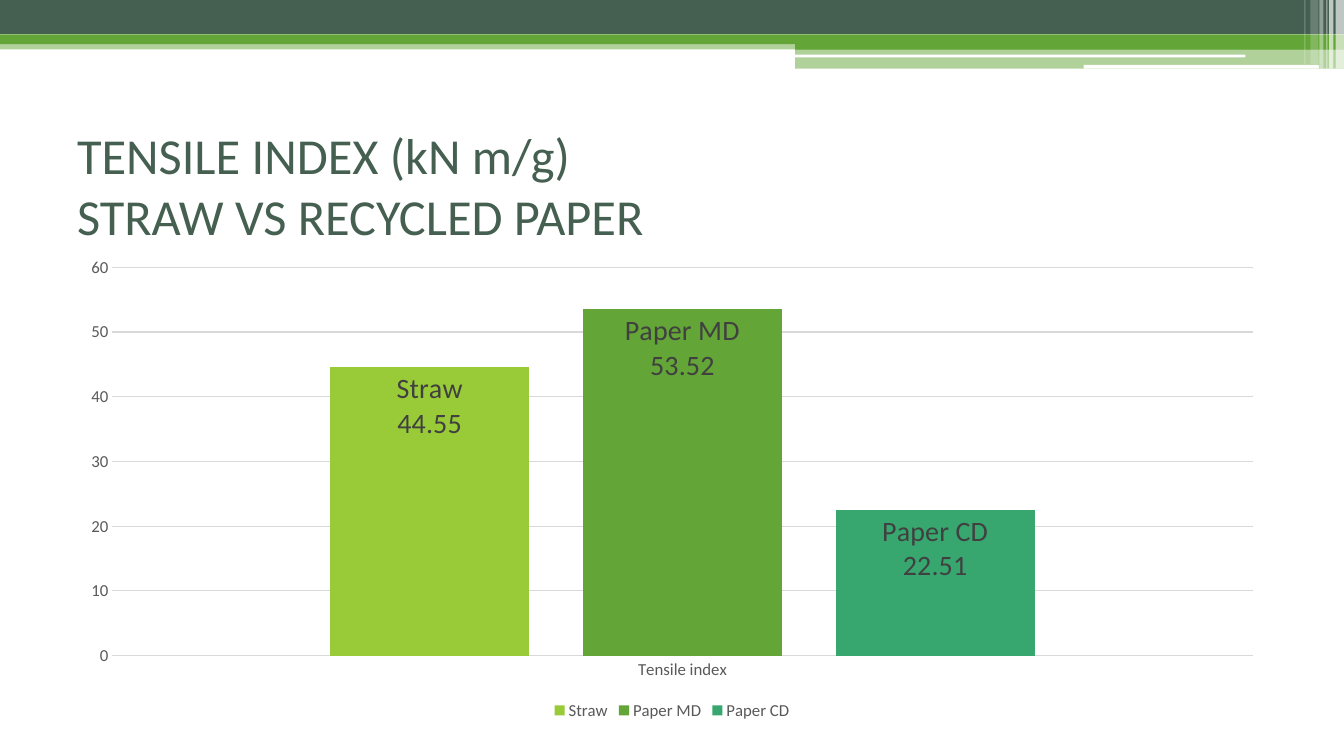
from lxml.etree import SubElement
from pptx import Presentation
from pptx.chart.data import CategoryChartData
from pptx.dml.color import RGBColor
from pptx.enum.chart import XL_CHART_TYPE as ChartType
from pptx.enum.chart import XL_LABEL_POSITION as LabelPosition
from pptx.enum.chart import XL_LEGEND_POSITION as LegendPosition
from pptx.enum.chart import XL_TICK_MARK as TickMark
from pptx.enum.shapes import MSO_SHAPE as Preset
from pptx.enum.text import MSO_ANCHOR as Anchor
from pptx.oxml.ns import qn
from pptx.util import Pt

COLORS = {
    "dark": "455F51", "green": "63A537", "white": "FFFFFF", "lime": "99CB38",
    "teal": "37A76F", "axis": "595959", "grid": "D9D9D9", "label": "404040",
}
FONT = "Calibri"
BANDS = [
    (0, 28.8, 960, 6.5, "green", 50),
    (0, 0, 960, 24.5, "dark", 100),
    (0, 24.5, 960, 7, "green", 100),
    (568, 28, 392, 7.5, "green", 100),
    (568, 35, 392, 14, "green", 50),
]
GROOVES = [(567.5, 39, 322, 2), (774, 46.4, 168, 2.6)]
GLINTS = [
    (954, 6, 49, 65), (949.5, 3, 49, 65), (947.5, 0.7, 49, 60),
    (942.5, 2.9, 49, 40), (936, 5.8, 46, 20), (931.7, 0.7, 46, 30),
]
SERIES = [("Straw", 44.55, "lime"), ("Paper MD", 53.52, "green"), ("Paper CD", 22.51, "teal")]


def color(name):
    """Return the named colour."""
    return RGBColor.from_string(COLORS[name])


def set_font(font, size, name):
    """Set size, typeface and colour of a font."""
    for attribute, value in {"size": Pt(size), "name": FONT, "bold": False}.items():
        setattr(font, attribute, value)
    font.color.rgb = color(name)


def add_block(slide, box, name, opacity=100, preset=Preset.RECTANGLE):
    """Add a plain filled shape with the given opacity in percent."""
    shape = slide.shapes.add_shape(preset, *map(Pt, box))
    shape.shadow.inherit = False
    shape.fill.solid()
    shape.fill.fore_color.rgb = color(name)
    shape.line.fill.background()
    if opacity < 100:
        swatch = shape.fill._xPr.find(".//" + qn("a:srgbClr"))
        SubElement(swatch, qn("a:alpha"), val=str(opacity * 1000))


def add_header(slide, left, top):
    """Draw the banded header from its top left corner."""
    for x, y, width, height, name, opacity in BANDS:
        add_block(slide, (left + x, top + y, width, height), name, opacity)
    for x, y, width, height in GROOVES:
        box = (left + x, top + y, width, height)
        add_block(slide, box, "white", preset=Preset.ROUNDED_RECTANGLE)
    for x, width, height, opacity in GLINTS:
        add_block(slide, (left + x, top, width, height), "white", opacity)


def add_title(slide, box, text):
    """Write the title, vertically centred in its box."""
    frame = slide.shapes.add_textbox(*map(Pt, box)).text_frame
    frame.word_wrap = True
    frame.vertical_anchor = Anchor.MIDDLE
    paragraph = frame.paragraphs[0]
    paragraph.text = text
    set_font(paragraph.font, 36, "dark")
    for run in paragraph.runs:
        set_font(run.font, 36, "dark")


def format_axes(chart):
    """Style both axes and the gridlines."""
    for axis in (chart.category_axis, chart.value_axis):
        axis.major_tick_mark = axis.minor_tick_mark = TickMark.NONE
        set_font(axis.tick_labels.font, 12, "axis")
    values = chart.value_axis
    for attribute, value in {"minimum_scale": 0, "maximum_scale": 60, "major_unit": 10}.items():
        setattr(values, attribute, value)
    values.format.line.fill.background()
    for line in (chart.category_axis.format.line, values.major_gridlines.format.line):
        line.color.rgb = color("grid")
        line.width = Pt(0.75)


def format_series(series, name):
    """Fill one series and label it with its name and value."""
    series.format.fill.solid()
    series.format.fill.fore_color.rgb = color(name)
    series.invert_if_negative = False
    labels = series.data_labels
    settings = {"show_value": True, "show_series_name": True, "position": LabelPosition.INSIDE_END}
    for attribute, value in settings.items():
        setattr(labels, attribute, value)
    set_font(labels.font, 20, "label")
    element = labels._element
    separator = SubElement(element, qn("c:separator"))
    separator.text = "\n"
    element.find(qn("c:showBubbleSize")).addnext(separator)


def add_tensile_chart(slide, box):
    """Add the clustered column chart in its box."""
    data = CategoryChartData()
    data.categories = ["Tensile index"]
    for name, value, _ in SERIES:
        data.add_series(name, [value])
    chart = slide.shapes.add_chart(ChartType.COLUMN_CLUSTERED, *map(Pt, box), data).chart
    set_font(chart.font, 10, "axis")
    chart.has_title = False
    chart.has_legend = True
    chart.legend.position = LegendPosition.BOTTOM
    chart.legend.include_in_layout = False
    set_font(chart.legend.font, 12, "axis")
    plot = chart.plots[0]
    for attribute, value in {"gap_width": 219, "overlap": -27, "vary_by_categories": False}.items():
        setattr(plot, attribute, value)
    format_axes(chart)
    for series, (_, _, name) in zip(plot.series, SERIES):
        format_series(series, name)


def main():
    """Build and save the slide."""
    presentation = Presentation()
    presentation.slide_width, presentation.slide_height = Pt(960), Pt(540)
    slide = presentation.slides.add_slide(presentation.slide_layouts[6])
    add_header(slide, 0, 0)
    add_title(slide, (48, 90, 864, 84), "TENSILE INDEX (kN m/g)\vSTRAW VS RECYCLED PAPER")
    add_tensile_chart(slide, (48, 177, 864, 340.5))
    presentation.save("out.pptx")


if __name__ == "__main__":
    main()
